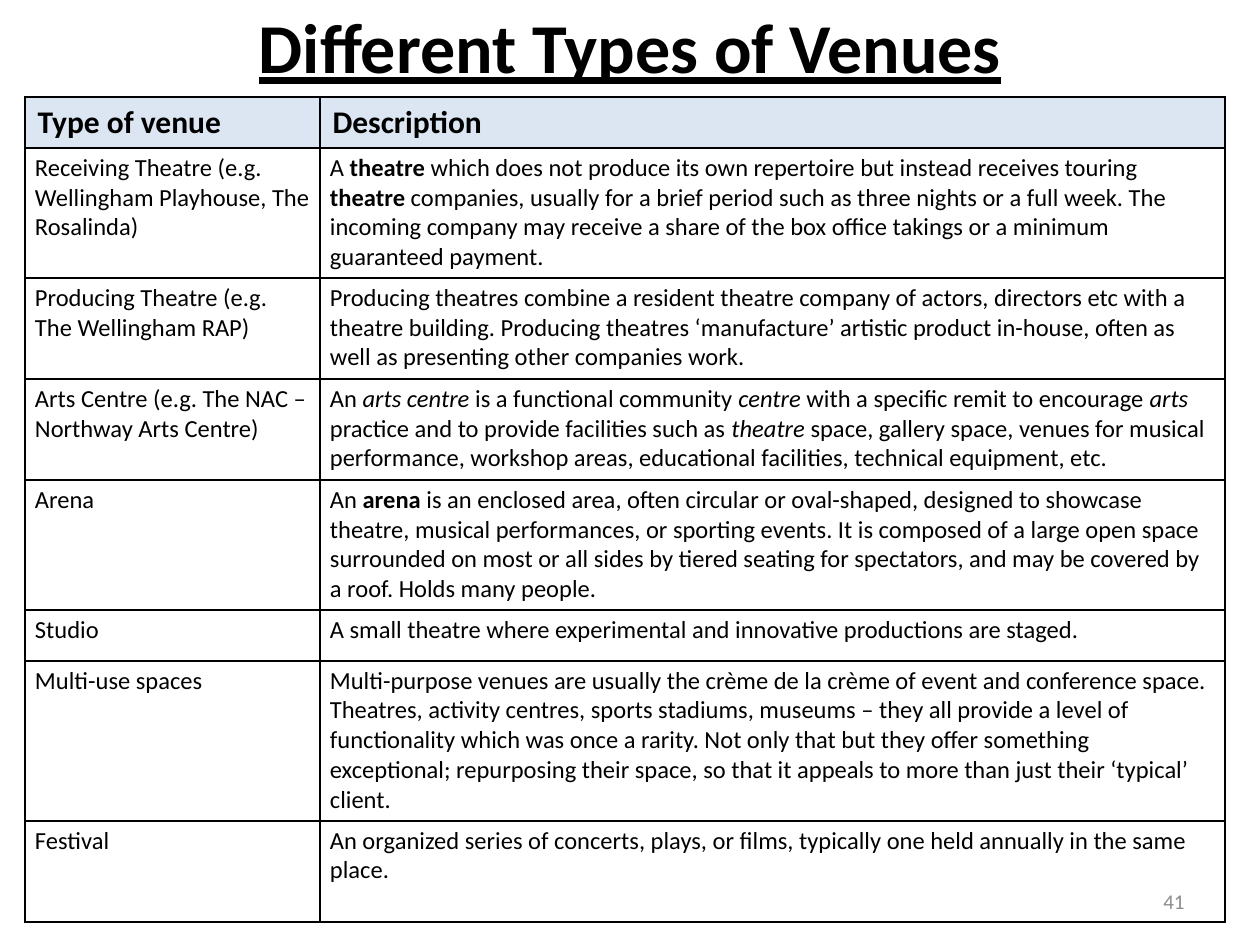
from dataclasses import dataclass

from lxml import etree
from pptx import Presentation
from pptx import util as u
from pptx.dml.color import RGBColor
from pptx.enum import text
from pptx.oxml.ns import qn

PX = 914400 / 126
FONT = "Calibri"
COLORS = {"ink": "000000", "header": "DCE6F2", "paper": "FFFFFF", "number": "8C8C8C"}
COLUMN_WIDTHS = (295, 905)
HEADER_HEIGHT = 51
HEADINGS = ("Type of venue", "Description")


@dataclass
class Venue:
    name: str
    description: str  # asterisks surround emphasised words
    height: int
    emphasis: str = "bold"


VENUES = [
    Venue("Receiving Theatre (e.g. Wellingham Playhouse, The Rosalinda)",
          "A *theatre* which does not produce its own repertoire but instead receives "
          "touring *theatre* companies, usually for a brief period such as three nights "
          "or a full week. The incoming company may receive a share of the box office "
          "takings or a minimum guaranteed payment.", 130),
    Venue("Producing Theatre (e.g. The Wellingham RAP)",
          "Producing theatres combine a resident theatre company of actors, directors etc "
          "with a theatre building. Producing theatres ‘manufacture’ artistic product "
          "in-house, often as well as presenting other companies work.", 101),
    Venue("Arts Centre (e.g. The NAC – Northway Arts Centre)",
          "An *arts centre* is a functional community *centre* with a specific remit to "
          "encourage *arts* practice and to provide facilities such as *theatre* space, "
          "gallery space, venues for musical performance, workshop areas, educational "
          "facilities, technical equipment, etc.", 101, "italic"),
    Venue("Arena",
          "An *arena* is an enclosed area, often circular or oval-shaped, designed to "
          "showcase theatre, musical performances, or sporting events. It is composed of "
          "a large open space surrounded on most or all sides by tiered seating for "
          "spectators, and may be covered by a roof. Holds many people.", 130),
    Venue("Studio",
          "A small theatre where experimental and innovative productions are staged.", 51),
    Venue("Multi-use spaces",
          "Multi-purpose venues are usually the crème de la crème of event and conference "
          "space. Theatres, activity centres, sports stadiums, museums – they all provide "
          "a level of functionality which was once a rarity. Not only that but they offer "
          "something exceptional; repurposing their space, so that it appeals to more "
          "than just their ‘typical’ client.", 160),
    Venue("Festival",
          "An organized series of concerts, plays, or films, typically one held annually "
          "in the same place.", 101),
]


def px(length: int) -> u.Emu:
    return u.Emu(round(length * PX))


def style(font, size: int, color: str = "ink", bold: bool = False) -> None:
    font.name = FONT
    font.size = u.Pt(size)
    font.bold = bold
    font.color.rgb = RGBColor.from_string(COLORS[color])


def add_label(slide, content: str, box: tuple[int, int, int, int], align):
    shape = slide.shapes.add_textbox(*map(px, box))
    shape.text_frame.word_wrap = True
    shape.text_frame.text = content
    paragraph = shape.text_frame.paragraphs[0]
    paragraph.alignment = align
    return shape.text_frame, paragraph.runs[0].font


def add_borders(cell) -> None:
    properties = cell._tc.get_or_add_tcPr()
    for index, side in enumerate(("lnL", "lnR", "lnT", "lnB")):
        line = etree.Element(qn(f"a:{side}"), w=str(u.Pt(1)))
        fill = etree.SubElement(line, qn("a:solidFill"))
        etree.SubElement(fill, qn("a:srgbClr"), val=COLORS["ink"])
        properties.insert(index, line)


def fill_cell(cell, content: str, size: int, fill: str, bold: bool = False,
              emphasis: str = "bold") -> None:
    paragraph = cell.text_frame.paragraphs[0]
    for index, part in enumerate(content.split("*")):
        run = paragraph.add_run()
        run.text = part
        style(run.font, size, bold=bold)
        if index % 2:
            setattr(run.font, emphasis, True)
    cell.fill.solid()
    cell.fill.fore_color.rgb = RGBColor.from_string(COLORS[fill])
    add_borders(cell)


def add_venue_table(slide) -> None:
    heights = [HEADER_HEIGHT] + [venue.height for venue in VENUES]
    frame = slide.shapes.add_table(len(heights), len(COLUMN_WIDTHS), px(25), px(97),
                                   px(sum(COLUMN_WIDTHS)), px(sum(heights)))
    table = frame.table
    for column, width in zip(table.columns, COLUMN_WIDTHS):
        column.width = px(width)
    for row, height in zip(table.rows, heights):
        row.height = px(height)

    for column, heading in enumerate(HEADINGS):
        fill_cell(table.cell(0, column), heading, 18, "header", bold=True)
    for row, venue in enumerate(VENUES, start=1):
        for column, content in enumerate((venue.name, venue.description)):
            cell = table.cell(row, column)
            cell.margin_left = cell.margin_right = px(10)
            cell.margin_top = cell.margin_bottom = px(5)
            fill_cell(cell, content, 14, "paper", emphasis=venue.emphasis)


def main() -> None:
    presentation = Presentation()
    presentation.slide_width, presentation.slide_height = px(1260), px(945)
    slide = presentation.slides.add_slide(presentation.slide_layouts[6])

    # Title
    frame, font = add_label(slide, "Different Types of Venues", (0, -3, 1260, 97),
                            text.PP_ALIGN.CENTER)
    frame.auto_size = text.MSO_AUTO_SIZE.SHAPE_TO_FIT_TEXT
    style(font, 40, bold=True)
    font.underline = True

    # Venues and their descriptions
    add_venue_table(slide)

    # Slide number
    frame, font = add_label(slide, "41", (903, 876, 294, 50), text.PP_ALIGN.RIGHT)
    frame.vertical_anchor = text.MSO_ANCHOR.MIDDLE
    style(font, 12, "number")

    presentation.save("out.pptx")


if __name__ == "__main__":
    main()
